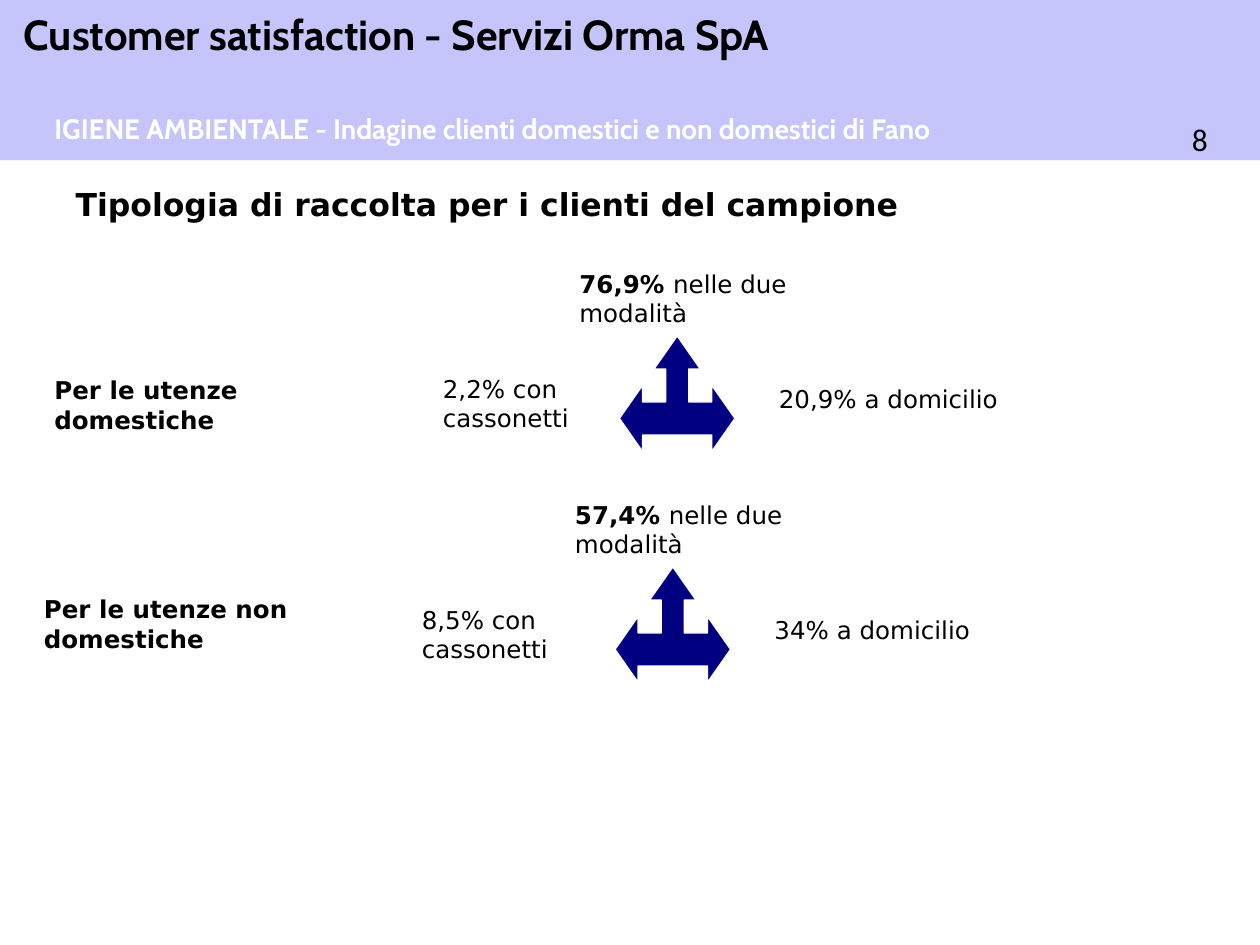
from lxml import etree
from pptx import Presentation
from pptx.dml.color import RGBColor
from pptx.enum import shapes, text
from pptx.oxml.ns import qn
from pptx.util import Pt

COLORS = {"banner": "B7B7FB", "arrow": "000080", "ink": "000000", "white": "FFFFFF"}
BODY, HEADING = "DejaVu Sans", "Cabin"

# Outline of the three-way arrow: x in tenths of its width, y in sevenths of its height
ARROW_POINTS = [(5, 0), (3, 2), (4, 2), (4, 4), (2, 4), (2, 3), (0, 5), (2, 7), (2, 6),
                (8, 6), (8, 7), (10, 5), (8, 3), (8, 4), (6, 4), (6, 2), (7, 2)]
ARROW_SIZE = 66


class SlideBuilder:
    def __init__(self, slide):
        self.slide = slide

    def color(self, name):
        return RGBColor.from_string(COLORS[name])

    def fill_text(self, box, area, runs, size=14, font=BODY, color="ink", wrap=True):
        """Place a text shape and fill it with (words, bold) runs."""
        for side, value in zip(("left", "top", "width", "height"), area):
            setattr(box, side, Pt(value))
        frame = box.text_frame
        frame_format = {"word_wrap": wrap, "auto_size": text.MSO_AUTO_SIZE.NONE,
                        "vertical_anchor": text.MSO_ANCHOR.TOP}
        for name, value in frame_format.items():
            setattr(frame, name, value)
        paragraph = frame.paragraphs[0]
        paragraph.alignment = text.PP_ALIGN.LEFT
        for words, bold in runs:
            run = paragraph.add_run()
            run.text = words
            for name, value in {"name": font, "size": Pt(size), "bold": bold}.items():
                setattr(run.font, name, value)
            run.font.color.rgb = self.color(color)

    def title(self, area, words, size):
        self.fill_text(self.slide.shapes.title, area, [(words, True)], size)

    def label(self, area, runs, **style):
        self.fill_text(self.slide.shapes.add_textbox(0, 0, 0, 0), area, runs, **style)

    def banner(self, width, height, opacity):
        band = self.slide.shapes.add_shape(
            shapes.MSO_SHAPE.RECTANGLE, 0, 0, Pt(width), Pt(height))
        band.shadow.inherit = False
        band.fill.solid()
        band.fill.fore_color.rgb = self.color("banner")
        band.line.fill.background()
        shade = band.element.spPr.find(".//" + qn("a:srgbClr"))
        etree.SubElement(shade, qn("a:alpha")).set("val", str(opacity * 1000))

    def three_way_arrow(self, left, top):
        scale = (Pt(ARROW_SIZE / 10), Pt(ARROW_SIZE / 7))
        outline = self.slide.shapes.build_freeform(*ARROW_POINTS[0], scale=scale)
        outline.add_line_segments(ARROW_POINTS[1:], close=True)
        arrow = outline.convert_to_shape(Pt(left), Pt(top))
        arrow.shadow.inherit = False
        arrow.fill.solid()
        arrow.fill.fore_color.rgb = self.color("arrow")
        arrow.line.color.rgb = self.color("white")
        arrow.line.width = Pt(0.75)

    def collection_split(self, left, top, both, home):
        """Draw an arrow with the share above it and the share to its right."""
        self.three_way_arrow(left, top)
        self.label((left - 30, top - 42, 147, 41),
                   [(both + " ", True), ("nelle due modalità", False)])
        self.label((left + 84, top + 24, 147, 24), [(home + " a domicilio", False)])


def main():
    deck = Presentation()
    deck.slide_width, deck.slide_height = Pt(720), Pt(540)
    page = SlideBuilder(deck.slides.add_slide(deck.slide_layouts[5]))

    page.banner(720, 91.5, opacity=80)
    page.label((674, 65, 46, 29), [("8", False)], size=18, font="Calibri")
    page.label((6.5, 1.5, 648, 36), [("Customer satisfaction - Servizi Orma SpA", True)],
               size=24, font=HEADING)
    page.label((24, 60, 554, 27),
               [("IGIENE AMBIENTALE - Indagine clienti domestici e non domestici di Fano", True)],
               size=16, font=HEADING, color="white", wrap=False)
    page.title((36, 102, 552, 29), "Tipologia di raccolta per i clienti del campione", 18)

    page.label((24, 211, 180, 41), [("Per le utenze domestiche", True)])
    page.label((246, 210, 96, 41), [("2,2% con cassonetti", False)])
    page.collection_split(354, 192, "76,9%", "20,9%")

    page.label((18, 336, 180, 41), [("Per le utenze non domestiche", True)])
    page.label((234, 342, 105, 41), [("8,5% con cassonetti", False)])
    page.collection_split(351.5, 324, "57,4%", "34%")

    deck.save("out.pptx")


if __name__ == "__main__":
    main()
